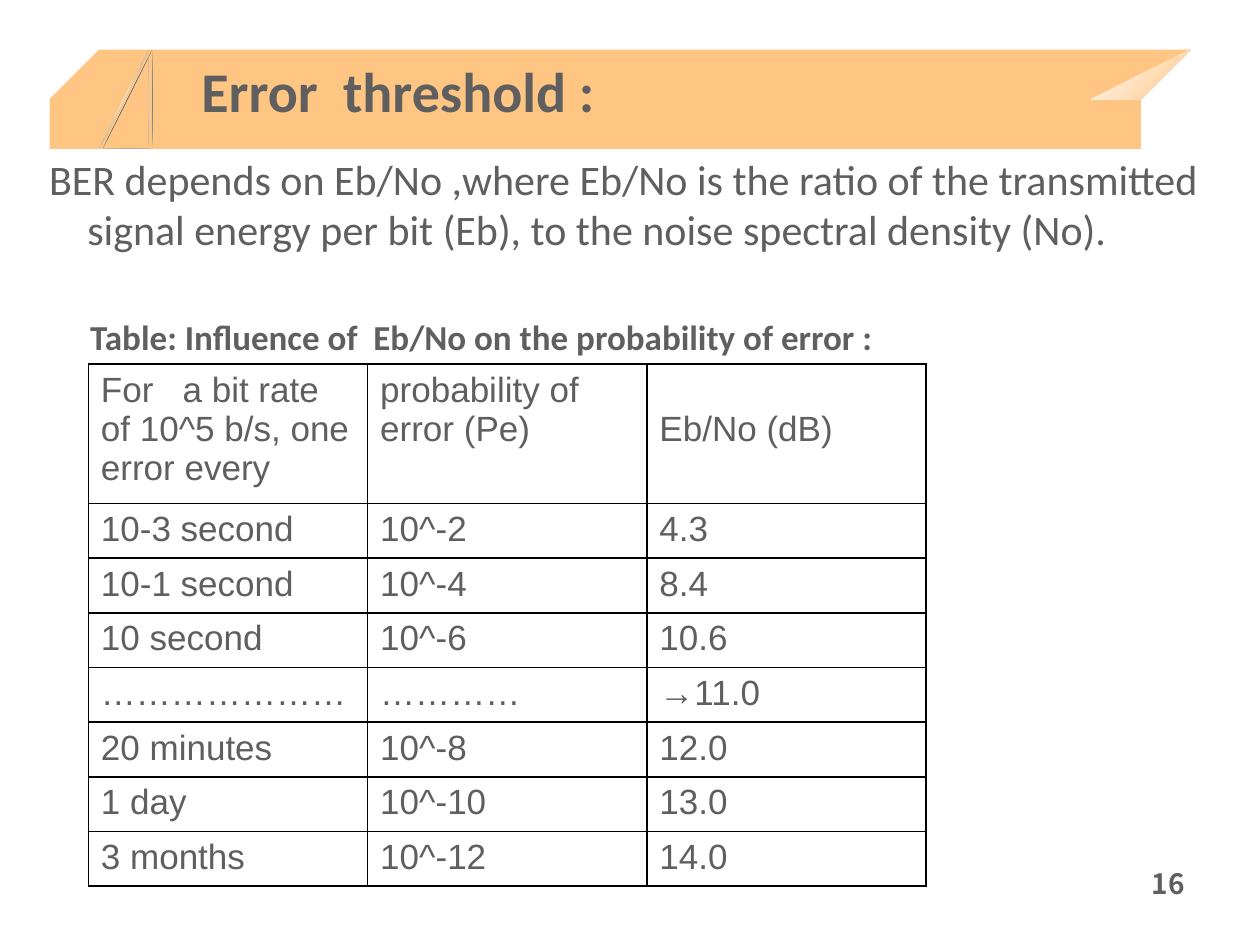
from lxml.etree import SubElement
from pptx import Presentation
from pptx.dml.color import RGBColor
from pptx.enum.text import MSO_ANCHOR, PP_ALIGN
from pptx.oxml import parse_xml
from pptx.oxml.ns import nsdecls, qn
from pptx.util import Cm, Pt

GREY = RGBColor(0x5F, 0x5F, 0x5F)
ORANGE = RGBColor(0xFF, 0xC5, 0x83)
WHITE = RGBColor(0xFF, 0xFF, 0xFF)
CLIP_LIGHT = RGBColor(0xFC, 0xFC, 0xFC)
CLIP_DARK = RGBColor(0xB2, 0xB2, 0xB2)
SHADOW = RGBColor(0x80, 0x80, 0x80)
BLACK = RGBColor(0, 0, 0)

BAND = [
    (1.4, 2.51), (22.83, 2.51),
    ((23.01, 2.49), (23.11, 2.51), (23.32, 2.29)),
    (23.98, 1.17), (2.46, 1.17), (2.26, 1.14), (2.06, 1.14), (1.9, 1.19),
    (1.78, 1.22), (1.65, 1.3), (1.5, 1.42), (1.42, 1.5), (1.4, 1.6),
]
FOLD = [
    (24, 1.14), (23.32, 2.39),
    ((23.16, 2.51), (23.44, 2.24), (23.09, 1.98)),
    ((22.73, 1.73), (22.12, 2.08), (22.3, 1.93)),
]
PAPER_CLIP = [
    (3.07, 1.4), (3.18, 1.4), (2.84, 2.77), (2.82, 2.82), (2.77, 2.9),
    (2.69, 2.95), (2.62, 3), (2.49, 2.95), (2.41, 2.92), (2.39, 2.9),
    (2.31, 2.79), (2.31, 2.59), (2.74, 0.84), (2.77, 0.76), (2.82, 0.71),
    (2.87, 0.66), (2.95, 0.64), (3.1, 0.64), (3.15, 0.66), (3.2, 0.74),
    (3.23, 0.81), (3.25, 0.89), (3.25, 0.97), (3.2, 1.14), (3.1, 1.14),
    (3.12, 0.99), (3.12, 0.79), (3.07, 0.76), (3, 0.74), (2.92, 0.79),
    (2.9, 0.84), (2.87, 0.91), (2.84, 0.99), (2.44, 2.64), (2.41, 2.74),
    (2.44, 2.79), (2.51, 2.84), (2.67, 2.84), (2.72, 2.74), (2.74, 2.67),
]
ERROR_RATES = [
    ("For   a bit rate of 10^5 b/s, one error every", "probability of error (Pe)", "Eb/No (dB)"),
    ("10-3 second", "10^-2", "4.3"),
    ("10-1 second", "10^-4", "8.4"),
    ("10 second", "10^-6", "10.6"),
    ("…………………", "…………", "→11.0"),
    ("20 minutes", "10^-8", "12.0"),
    ("1 day", "10^-10", "13.0"),
    ("3 months", "10^-12", "14.0"),
]


def flatten(outline, steps=10):
    points = []
    for item in outline:
        if not isinstance(item[0], tuple):
            points.append(item)
            continue
        controls = (points[-1], *item)
        for step in range(1, steps + 1):
            t = step / steps
            weights = ((1 - t) ** 3, 3 * t * (1 - t) ** 2, 3 * t * t * (1 - t), t ** 3)
            points.append(tuple(
                sum(weight * point[axis] for weight, point in zip(weights, controls))
                for axis in (0, 1)
            ))
    return points


class SlideBuilder:
    def __init__(self, slide, color=GREY, font_name="Calibri"):
        self.slide = slide
        self.color = color
        self.font_name = font_name

    def style(self, paragraph, size, bold=False, font_name=None):
        font = paragraph.font
        font.name = font_name or self.font_name
        font.size = Pt(size)
        font.bold = bold
        font.color.rgb = self.color

    def text(self, text, left, top, width, height, size, bold=False, font_name=None,
             anchor=MSO_ANCHOR.TOP, align=PP_ALIGN.LEFT, hanging=0):
        shape = self.slide.shapes.add_textbox(Cm(left), Cm(top), Cm(width), Cm(height))
        frame = shape.text_frame
        frame.word_wrap = True
        frame.vertical_anchor = anchor
        paragraph = frame.paragraphs[0]
        paragraph.text = text
        paragraph.alignment = align
        if hanging:
            properties = paragraph._p.get_or_add_pPr()
            properties.set("marL", str(Cm(hanging)))
            properties.set("indent", str(-Cm(hanging)))
        self.style(paragraph, size, bold, font_name)

    def outline(self, outline, *colors):
        points = flatten(outline)
        builder = self.slide.shapes.build_freeform(*points[0], scale=Cm(1))
        builder.add_line_segments(points[1:], close=True)
        shape = builder.convert_to_shape()
        shape.shadow.inherit = False
        shape.line.fill.background()
        if len(colors) == 1:
            shape.fill.solid()
            shape.fill.fore_color.rgb = colors[0]
        else:
            shape.fill.gradient()
            shape.fill.gradient_angle = 315
            for stop, color, position in zip(shape.fill.gradient_stops, colors, (0, 1)):
                stop.color.rgb = color
                stop.position = position
        return shape

    def paper_clip(self, outline):
        shape = self.outline(outline, CLIP_LIGHT, CLIP_DARK)
        properties = shape._element.spPr
        gradient = properties.find(qn("a:gradFill"))
        gradient.replace(gradient.find(qn("a:lin")), parse_xml(
            f'<a:path {nsdecls("a")} path="circle">'
            '<a:fillToRect l="50000" t="50000" r="50000" b="50000"/></a:path>'))
        shadow = SubElement(properties.find(qn("a:effectLst")), qn("a:outerShdw"),
                            dist=str(Pt(2)), dir="0", algn="ctr", rotWithShape="0")
        SubElement(shadow, qn("a:srgbClr"), val=str(SHADOW))

    def table(self, rows, left, top, column_width, header_height, row_height):
        heights = [header_height] + [row_height] * (len(rows) - 1)
        columns = len(rows[0])
        table = self.slide.shapes.add_table(
            len(rows), columns, Cm(left), Cm(top),
            Cm(column_width * columns), Cm(sum(heights))).table
        table.first_row = False
        table.horz_banding = False
        for column in table.columns:
            column.width = Cm(column_width)
        for row, height, texts in zip(table.rows, heights, rows):
            row.height = Cm(height)
            for cell, text in zip(row.cells, texts):
                cell.text = text
                self.style(cell.text_frame.paragraphs[0], 20, font_name="Arial")
                cell.fill.background()
                self.borders(cell)
        return table

    def borders(self, cell):
        properties = cell._tc.get_or_add_tcPr()
        for index, side in enumerate(("lnL", "lnR", "lnT", "lnB")):
            properties.insert(index, parse_xml(
                f'<a:{side} {nsdecls("a")} w="{Pt(1)}"><a:solidFill>'
                f'<a:srgbClr val="{BLACK}"/></a:solidFill></a:{side}>'))


def main():
    presentation = Presentation()
    presentation.slide_width = Cm(25.4)
    presentation.slide_height = Cm(19.05)
    builder = SlideBuilder(presentation.slides.add_slide(presentation.slide_layouts[6]))

    builder.outline(BAND, ORANGE)
    builder.outline(FOLD, WHITE, ORANGE)
    builder.paper_clip(PAPER_CLIP)
    builder.text(
        "BER depends on Eb/No ,where Eb/No is the ratio of the transmitted "
        "signal energy per bit (Eb), to the noise spectral density (No).",
        0.74, 2.95, 23.93, 2.31, 24, anchor=MSO_ANCHOR.MIDDLE, hanging=0.77)
    table = builder.table(ERROR_RATES, 1.78, 7.34, 5.63, 2.81, 1.1)
    table.cell(0, 2).margin_top = Cm(0.92)
    builder.text("16", 18.21, 17.35, 5.92, 1.32, 16, True, "Noto Sans CJK KR",
                 align=PP_ALIGN.RIGHT)
    builder.text("Table: Influence of  Eb/No on the probability of error :",
                 1.57, 6.22, 21.21, 1.12, 20, True, anchor=MSO_ANCHOR.MIDDLE)
    builder.text("Error  threshold :", 3.81, 1.02, 10.16, 1.63, 32, True)
    presentation.save("out.pptx")


if __name__ == "__main__":
    main()
